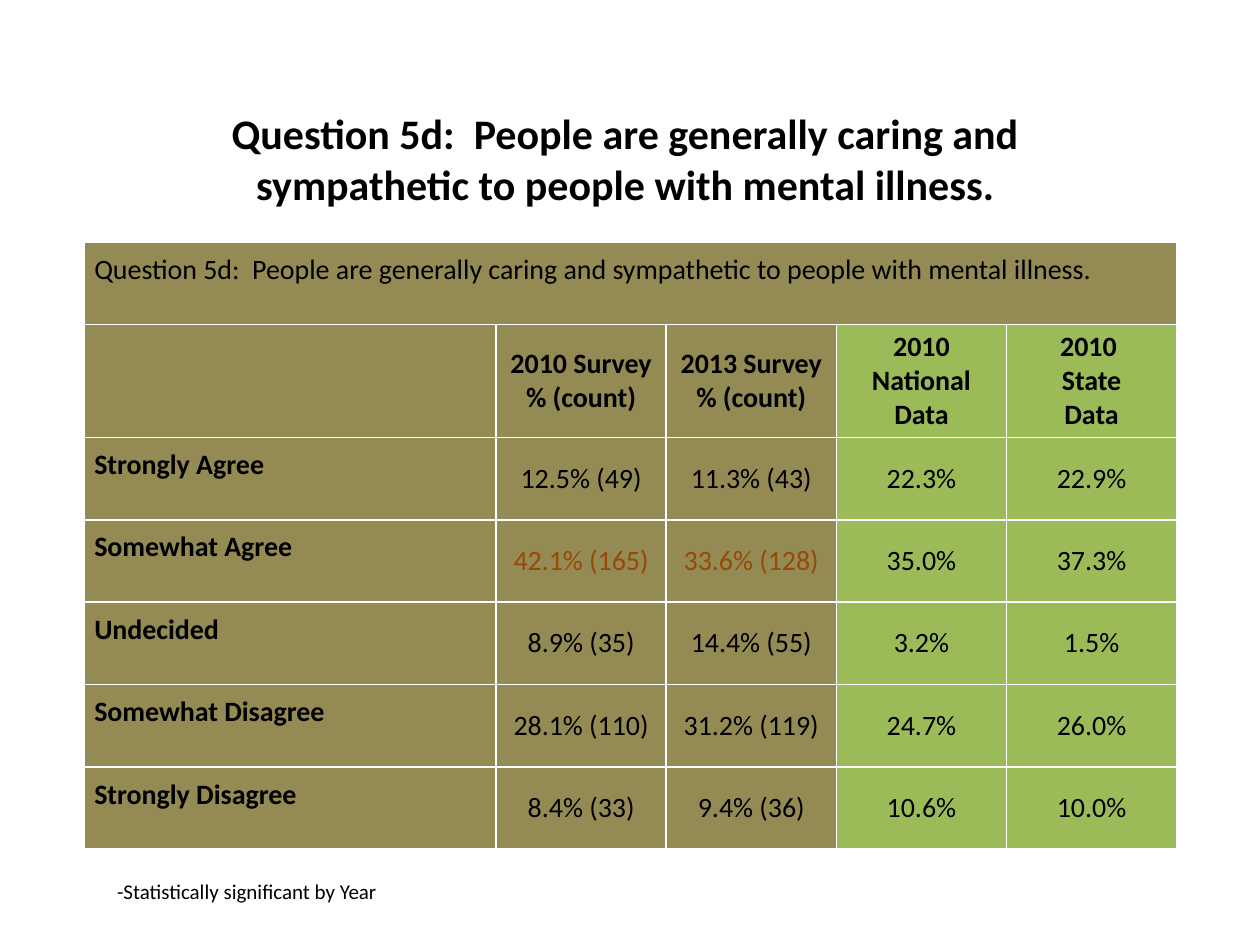
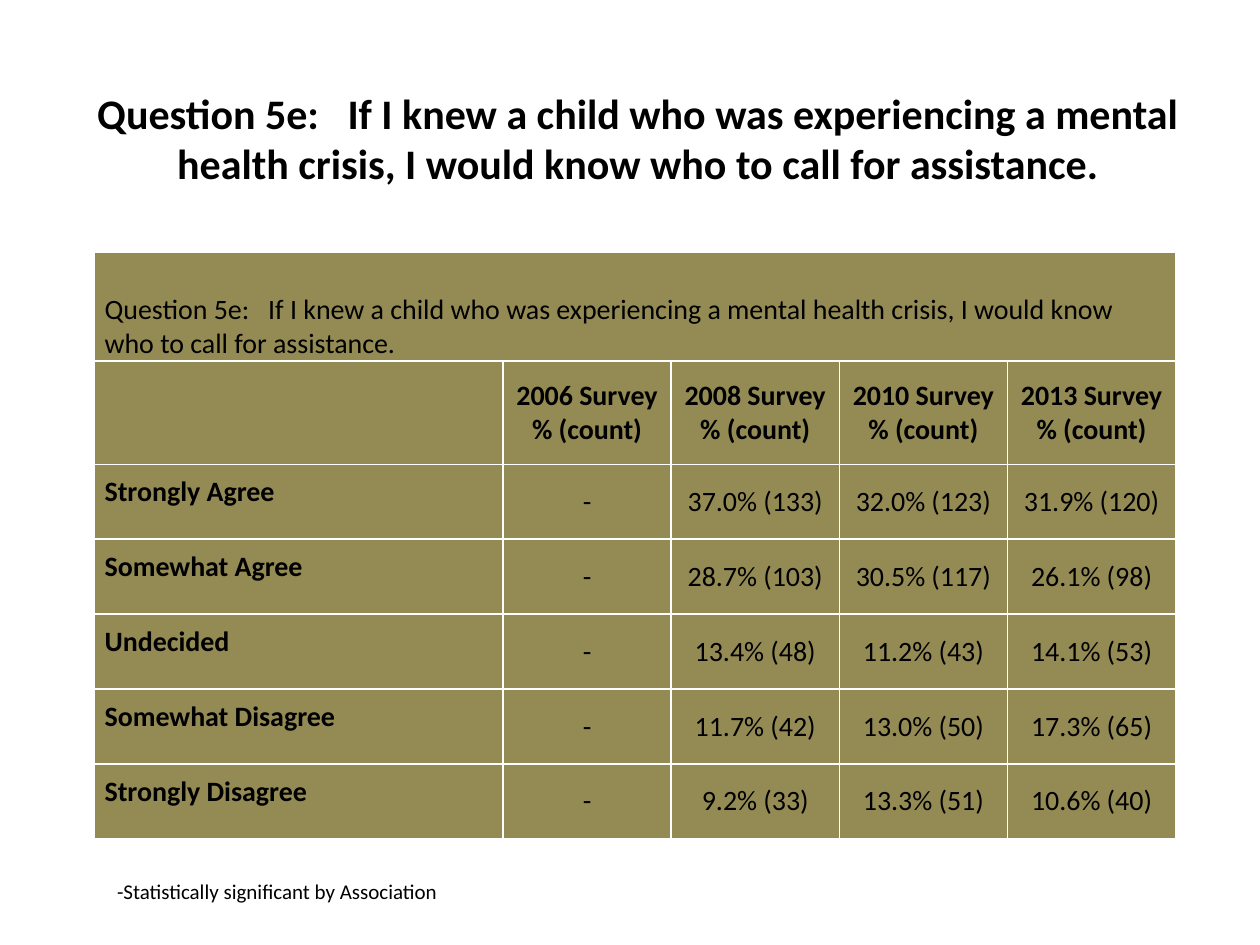
import dataclasses
import typing

import pptx
import pptx.dml.color
import pptx.enum.text
import pptx.util

Cm = pptx.util.Cm
Pt = pptx.util.Pt
Color = pptx.dml.color.RGBColor
Align = pptx.enum.text.PP_ALIGN
Anchor = pptx.enum.text.MSO_ANCHOR
Fit = pptx.enum.text.MSO_AUTO_SIZE

BLACK = Color(0x00, 0x00, 0x00)
OLIVE = Color(0x94, 0x8A, 0x54)
GREEN = Color(0x9B, 0xBB, 0x59)
RUST = Color(0x98, 0x48, 0x07)

BASE = {"name": "Calibri", "color": BLACK, "bold": False}
TITLE = BASE | {"size": Pt(24), "bold": True}
BODY = BASE | {"size": Pt(16)}
HEAD = BODY | {"bold": True}
MARK = BODY | {"color": RUST}
NOTE = BASE | {"size": Pt(12)}

SIDE = {"margin_left": Cm(0.2), "margin_right": Cm(0.2), "margin_bottom": 0}
HIGH = SIDE | {"margin_top": Pt(6), "vertical_anchor": Anchor.TOP}
MID = SIDE | {"margin_top": 0, "vertical_anchor": Anchor.MIDDLE}
LOW = MID | {"vertical_anchor": Anchor.BOTTOM}

LABELS = ["Strongly Agree", "Somewhat Agree", "Undecided",
          "Somewhat Disagree", "Strongly Disagree"]


@dataclasses.dataclass
class Grid:
    left: float
    top: float
    label: float
    value: float
    rows: list[float]
    heads: list[str]
    values: list[list[str]]
    banner: dict[str, typing.Any]
    greens: tuple[int, ...] = ()
    marks: tuple[tuple[int, int], ...] = ()


@dataclasses.dataclass
class Page:
    title: str
    banner: str
    note: str
    left: float
    top: float
    grid: Grid


PAGES = [
    Page(
        "Question 5d:  People are generally caring and \v"
        "sympathetic to people with mental illness. ",
        "Question 5d:  People are generally caring and sympathetic "
        "to people with mental illness.",
        "-Statistically significant by Year", 1.27, 1.6,
        Grid(1.7, 4.88, 8.3, 3.43, [1.66, 2.28] + [1.66] * 5,
             ["2010 Survey\n% (count)", "2013 Survey\n% (count)",
              "2010 National\nData", "2010 \nState\nData"],
             [["12.5% (49)", "11.3% (43)", "22.3%", "22.9%"],
              ["42.1% (165)", "33.6% (128)", "35.0%", "37.3%"],
              ["8.9% (35)", "14.4% (55)", "3.2%", "1.5%"],
              ["28.1% (110)", "31.2% (119)", "24.7%", "26.0%"],
              ["8.4% (33)", "9.4% (36)", "10.6%", "10.0%"]],
             HIGH, greens=(3, 4), marks=((3, 1), (3, 2)))),
    Page(
        "Question 5e:   If I knew a child who was experiencing a mental "
        "health crisis, I would know who to call for assistance.",
        "Question 5e:   If I knew a child who was experiencing a mental "
        "health crisis, I would know who to call for assistance.",
        "-Statistically significant by Association", 1.43, 1.18,
        Grid(1.91, 5.08, 8.23, 3.39, [2.2, 2.08] + [1.51] * 5,
             [f"{year} Survey\n% (count)" for year in (2006, 2008, 2010, 2013)],
             [["-", "37.0% (133)", "32.0% (123)", "31.9% (120)"],
              ["-", "28.7% (103)", "30.5% (117)", "26.1% (98)"],
              ["-", "13.4% (48)", "11.2% (43)", "14.1% (53)"],
              ["-", "11.7% (42)", "13.0% (50)", "17.3% (65)"],
              ["-", "9.2% (33)", "13.3% (51)", "10.6% (40)"]],
             LOW)),
]


def apply(item: typing.Any, form: dict[str, typing.Any]) -> None:
    for key, value in form.items():
        if key == "color":
            item.color.rgb = value
        else:
            setattr(item, key, value)


def write(frame: typing.Any, text: str, font: dict[str, typing.Any],
          align: typing.Any = Align.LEFT) -> None:
    frame.text = text
    for para in frame.paragraphs:
        para.alignment = align
        apply(para.font, font)
        for run in para.runs:
            apply(run.font, font)


def draw_title(slide: typing.Any, page: Page) -> None:
    title = slide.shapes.title
    apply(title, {"left": Cm(page.left), "top": Cm(page.top),
                  "width": Cm(22.86), "height": Cm(3.18)})
    apply(title.text_frame, {"vertical_anchor": Anchor.MIDDLE,
                             "auto_size": Fit.NONE})
    write(title.text_frame, page.title, TITLE, Align.CENTER)


def draw_grid(slide: typing.Any, grid: Grid, banner: str) -> None:
    count = len(grid.heads) + 1
    table = slide.shapes.add_table(
        len(grid.rows), count, Cm(grid.left), Cm(grid.top),
        Cm(grid.label + grid.value * (count - 1)), Cm(sum(grid.rows))).table
    apply(table, {"first_row": False, "horz_banding": False})
    for row, height in zip(table.rows, grid.rows):
        row.height = Cm(height)
    for spot, column in enumerate(table.columns):
        column.width = Cm(grid.value if spot else grid.label)
    table.cell(0, 0).merge(table.cell(0, count - 1))

    lines = [[banner], ["", *grid.heads]]
    lines += [[label, *row] for label, row in zip(LABELS, grid.values)]
    for down, line in enumerate(lines):
        for over, text in enumerate(line):
            cell = table.cell(down, over)
            cell.fill.solid()
            cell.fill.fore_color.rgb = GREEN if over in grid.greens else OLIVE
            if down == 0:
                form, font = grid.banner, BODY
            elif over == 0:
                form, font = HIGH, HEAD
            elif down == 1:
                form, font = MID, HEAD
            else:
                form = MID
                font = MARK if (down, over) in grid.marks else BODY
            apply(cell, form)
            write(cell.text_frame, text, font,
                  Align.CENTER if over else Align.LEFT)


def draw_note(slide: typing.Any, text: str) -> None:
    box = slide.shapes.add_textbox(Cm(2.11), Cm(17.58), Cm(8.89), Cm(0.76))
    apply(box.text_frame, {"word_wrap": True,
                           "auto_size": Fit.SHAPE_TO_FIT_TEXT})
    write(box.text_frame, text, NOTE)


def main() -> None:
    deck = pptx.Presentation()
    apply(deck, {"slide_width": Cm(25.4), "slide_height": Cm(19.05)})
    layout = deck.slide_layouts.get_by_name("Title Only")
    for page in PAGES:
        slide = deck.slides.add_slide(layout)
        draw_title(slide, page)
        draw_grid(slide, page.grid, page.banner)
        draw_note(slide, page.note)
    deck.save("out.pptx")


if __name__ == "__main__":
    main()
